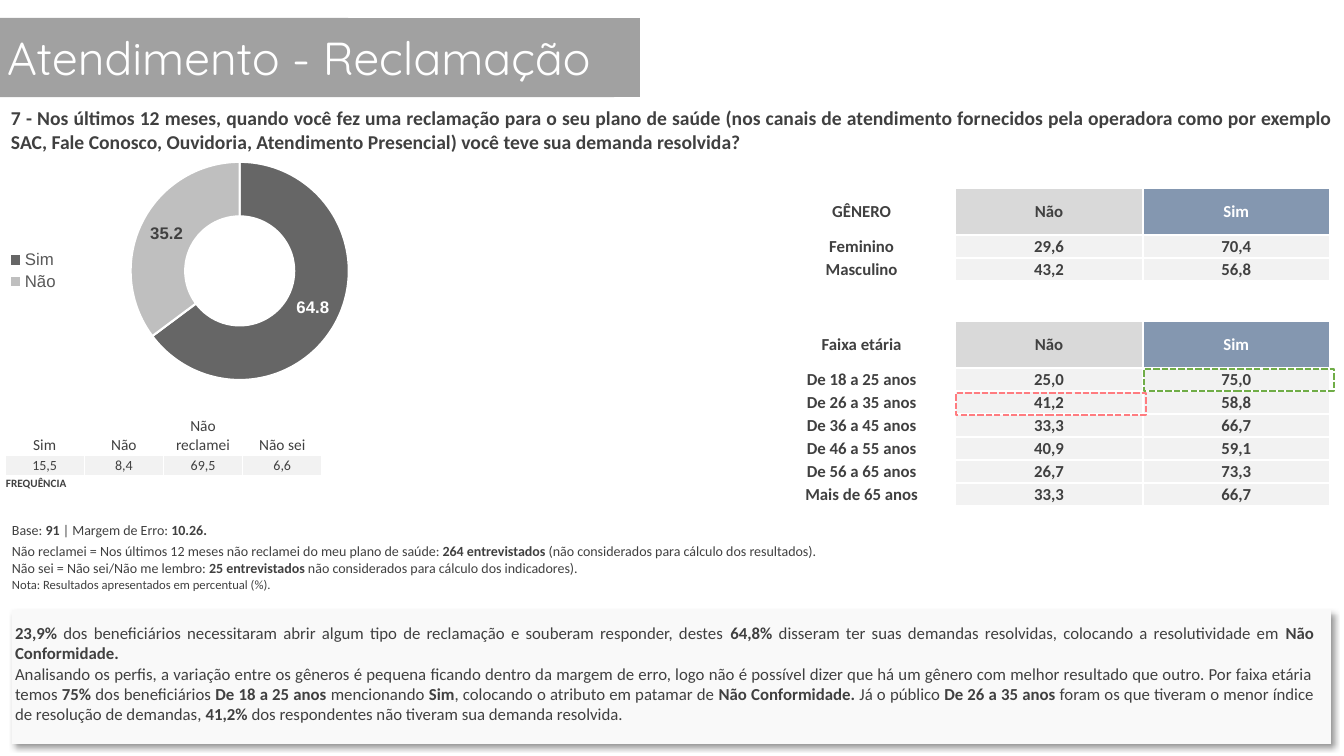
from lxml.etree import SubElement as Sub
from pptx import Presentation
from pptx.chart.data import CategoryChartData as Data
from pptx.dml.color import RGBColor as Color
from pptx.enum.chart import XL_CHART_TYPE as Kind, XL_LEGEND_POSITION as Side
from pptx.enum.dml import MSO_LINE as Dash
from pptx.enum.shapes import MSO_SHAPE as Form
from pptx.enum.text import MSO_ANCHOR as Anchor, MSO_AUTO_SIZE as Fit, PP_ALIGN as Align
from pptx.oxml.ns import qn
from pptx.util import Emu, Pt

WHITE = Color(0xFF, 0xFF, 0xFF)
INK = Color(0x40, 0x40, 0x40)
BAR = Color(0xA1, 0xA1, 0xA1)
PANEL = Color(0xF9, 0xF9, 0xF9)
PALE = Color(0xF2, 0xF2, 0xF2)
SILVER = Color(0xD9, 0xD9, 0xD9)
BLUE = Color(0x84, 0x97, 0xB0)
RED = Color(0xFF, 0x7C, 0x80)
GREEN = Color(0x70, 0xAD, 0x47)
DARK = Color(0x66, 0x66, 0x66)
LIGHT = Color(0xBF, 0xBF, 0xBF)
GREY = Color(0x59, 0x59, 0x59)
BLACK = Color(0, 0, 0)
WIDE, HIGH = 1344, 756
SCALE = 12192000 / WIDE


def px(*nums):
    return [Emu(round(n * SCALE)) for n in nums]


class Page:
    face = "Calibri"

    def __init__(self, deck):
        self.slide = deck.slides.add_slide(deck.slide_layouts[5])
        self.shapes = self.slide.shapes

    def font(self, font, size, color, bold=False, face=None):
        font.name, font.size, font.bold = face or self.face, Pt(size), bold
        font.color.rgb = color

    def say(self, frame, lines, size, color=INK, align=Align.LEFT, face=None):
        for row, line in enumerate(lines):
            para = frame.add_paragraph() if row else frame.paragraphs[0]
            para.alignment = align
            for turn, bit in enumerate(line.split("*")):
                if bit:
                    run = para.add_run()
                    run.text = bit
                    self.font(run.font, size, color, turn % 2 == 1, face)

    def title(self, text, box):
        head = self.shapes.title
        head.left, head.top, head.width, head.height = px(*box)
        geom = Sub(head._element.spPr, qn("a:prstGeom"), prst="roundRect")
        Sub(geom, qn("a:avLst"))
        head.fill.solid()
        head.fill.fore_color.rgb = BAR
        frame = head.text_frame
        frame.auto_size, frame.vertical_anchor = Fit.NONE, Anchor.MIDDLE
        self.say(frame, [text], 33, WHITE, face="Quicksand")
        self.shapes._spTree.append(head._element)

    def shape(self, form, box, fill=None, line=None, home=None):
        item = (home or self.shapes).add_shape(form, *px(*box))
        item.shadow.inherit = False
        if fill is None:
            item.fill.background()
        else:
            item.fill.solid()
            item.fill.fore_color.rgb = fill
        if line is None:
            item.line.fill.background()
        else:
            item.line.color.rgb, item.line.width = line, Pt(1.5)
            item.line.dash_style = Dash.SQUARE_DOT
        return item

    def shade(self, item):
        cast = Sub(item._element.spPr.find(qn("a:effectLst")), qn("a:outerShdw"),
                   blurRad="50800", dist="38100", dir="2700000", algn="tl", rotWithShape="0")
        tint = Sub(cast, qn("a:srgbClr"), val=str(BLACK))
        Sub(tint, qn("a:alpha"), val="40000")

    def text(self, lines, box, size, pad=(10, 5), home=None):
        frame = (home or self.shapes).add_textbox(*px(*box)).text_frame
        frame.word_wrap = True
        frame.margin_left = frame.margin_right = px(pad[0])[0]
        frame.margin_top = frame.margin_bottom = px(pad[1])[0]
        self.say(frame, lines, size, align=Align.JUSTIFY)

    def table(self, spot, width, highs, count):
        grid = self.shapes.add_table(len(highs), count, *px(*spot, width, sum(highs))).table
        grid.first_row = grid.horz_banding = False
        for col in grid.columns:
            col.width = px(width / count)[0]
        for row, high in zip(grid.rows, px(*highs)):
            row.height = high
        for cell in grid.iter_cells():
            cell.fill.background()
        return grid

    def cell(self, cell, lines, size, color=INK, fill=None, edge=0,
             align=Align.CENTER, anchor=Anchor.MIDDLE):
        cell.margin_left, cell.margin_right, cell.margin_top, cell.margin_bottom = px(1, 1, 1, 0)
        cell.vertical_anchor = anchor
        if edge:
            props = cell._tc.get_or_add_tcPr()
            for spot, name in enumerate(("lnL", "lnR", "lnT", "lnB")):
                line = Sub(props, qn("a:" + name), w=str(Pt(edge)))
                Sub(Sub(line, qn("a:solidFill")), qn("a:srgbClr"), val=str(WHITE))
                props.insert(spot, line)
        if fill is not None:
            cell.fill.solid()
            cell.fill.fore_color.rgb = fill
        self.say(cell.text_frame, lines, size, color, align)

    def ring(self, box, parts, plot):
        data = Data(number_format="0.0")
        data.categories = [name for name, *_ in parts]
        data.add_series("Series 1", [value for _, value, *_ in parts])
        chart = self.shapes.add_chart(Kind.DOUGHNUT, *px(*box), data).chart
        chart.has_title = False
        self.font(chart.font, 10, BLACK, face="Arial")
        chart.has_legend = True
        chart.legend.position, chart.legend.include_in_layout = Side.LEFT, False
        self.font(chart.legend.font, 12, GREY, face="Arial")
        body = chart.plots[0]
        body.vary_by_categories = body.has_data_labels = True
        tags = body.series[0].data_labels
        tags.show_value, tags.show_percentage = True, False
        tags.number_format, tags.number_format_is_linked = "0.0", False
        self.font(tags.font, 12, WHITE, True, "Arial")
        for spot, (_, _, fill, ink) in enumerate(parts):
            point = body.series[0].points[spot]
            point.format.fill.solid()
            point.format.fill.fore_color.rgb = fill
            point.format.line.color.rgb, point.format.line.width = WHITE, Pt(1.5)
            if ink != WHITE:
                self.font(point.data_label.font, 12, ink, True, "Arial")
        area = chart._chartSpace.chart.plotArea
        for old in area.findall(qn("c:layout")):
            area.remove(old)
        lay = Sub(area, qn("c:layout"))
        area.insert(0, lay)
        hand = Sub(lay, qn("c:manualLayout"))
        marks = ("inner", "edge", "edge", *map(str, plot))
        for name, mark in zip(("layoutTarget", "xMode", "yMode", "x", "y", "w", "h"), marks):
            Sub(hand, qn("c:" + name), val=mark)


def main():
    deck = Presentation()
    deck.slide_width, deck.slide_height = px(WIDE, HIGH)
    page = Page(deck)

    page.shape(Form.ROUNDED_RECTANGLE, (-27, 18, 654, 79), BAR)
    page.title("Atendimento - Reclamação", (-3, 18, 643, 79))
    page.text(["*7 - Nos últimos 12 meses, quando você fez uma reclamação para o seu plano de saúde (nos canais de atendimento fornecidos pela operadora como por exemplo SAC, Fale Conosco, Ouvidoria, Atendimento Presencial) você teve sua demanda resolvida?*"],
              (0, 100, WIDE, 58), 14, (11, 6))

    notes = [
        (["Base: *91* | Margem de Erro: *10.26.*"], 10),
        (["Não reclamei = Nos últimos 12 meses não reclamei do meu plano de saúde: *264 entrevistados *(não considerados para cálculo dos resultados).",
          "Não sei = Não sei/Não me lembro: *25 entrevistados* não considerados para cálculo dos indicadores)."], 10),
        (["Nota: Resultados apresentados em percentual (%)."], 9)]
    grid = page.table((11, 521), 984, [21, 34, 21], 1)
    for row, (lines, size) in enumerate(notes):
        page.cell(grid.cell(row, 0), lines, size, align=Align.LEFT, anchor=Anchor.TOP)

    home = page.shapes.add_group_shape().shapes
    page.shade(page.shape(Form.RECTANGLE, (12, 610, 1319, 134), PANEL, home=home))
    page.text([
        "*23,9%* dos beneficiários necessitaram abrir algum tipo de reclamação e souberam responder, destes *64,8%* disseram ter suas demandas resolvidas, colocando a resolutividade em *Não Conformidade.*",
        "Analisando os perfis, a variação entre os gêneros é pequena ficando dentro da margem de erro, logo não é possível dizer que há um gênero com melhor resultado que outro. Por faixa etária temos *75% *dos beneficiários *De 18 a 25 anos *mencionando *Sim*, colocando o atributo em patamar de *Não Conformidade. *Já o público *De 26 a 35 anos *foram os que tiveram o menor índice de resolução de demandas, *41,2%* dos respondentes não tiveram sua demanda resolvida."],
        (5, 618, 1319, 112), 12, home=home)

    groups = [
        ("GÊNERO", "Não", "Sim"), ("Feminino", "29,6", "70,4"), ("Masculino", "43,2", "56,8"),
        ("", "", ""),
        ("Faixa etária", "Não", "Sim"), ("De 18 a 25 anos", "25,0", "75,0"),
        ("De 26 a 35 anos", "41,2", "58,8"), ("De 36 a 45 anos", "33,3", "66,7"),
        ("De 46 a 55 anos", "40,9", "59,1"), ("De 56 a 65 anos", "26,7", "73,3"),
        ("Mais de 65 anos", "33,3", "66,7")]
    heads, gap = (0, 4), 3
    highs = [47 if row in heads else 40 if row == gap else 23 for row in range(len(groups))]
    grid = page.table((768, 188), 562, highs, 3)
    grid.cell(gap, 0).merge(grid.cell(gap, 2))
    for row, texts in enumerate(groups):
        fills = (None, SILVER, BLUE) if row in heads else (None, PALE, PALE)
        for col, (text, fill) in enumerate(zip(texts, fills)):
            page.cell(grid.cell(row, col), [f"*{text}*"], 12, WHITE if fill == BLUE else INK,
                      None if row == gap else fill, 1.5)

    page.shape(Form.RECTANGLE, (956, 393, 190, 22), line=RED)
    page.shape(Form.RECTANGLE, (1144, 369, 190, 22), line=GREEN)

    grid = page.table((5, 416), 317, [39, 21, 21], 4)
    shares = [("Sim", "15,5"), ("Não", "8,4"), ("Não reclamei", "69,5"), ("Não sei", "6,6")]
    grid.cell(2, 0).merge(grid.cell(2, 2))
    for col, (name, share) in enumerate(shares):
        page.cell(grid.cell(0, col), [name], 11, edge=1, anchor=Anchor.BOTTOM)
        page.cell(grid.cell(1, col), [share], 10, fill=PALE, edge=1)
        page.cell(grid.cell(2, col), ["" if col else "*FREQUÊNCIA*"], 8, edge=1,
                  align=Align.LEFT, anchor=Anchor.TOP)

    page.ring((-3, 147, 415, 248), [("Sim", 64.8, DARK, WHITE), ("Não", 35.2, LIGHT, INK)],
              (0.32, 0.06, 0.53, 0.88))
    deck.save("out.pptx")


if __name__ == "__main__":
    main()
